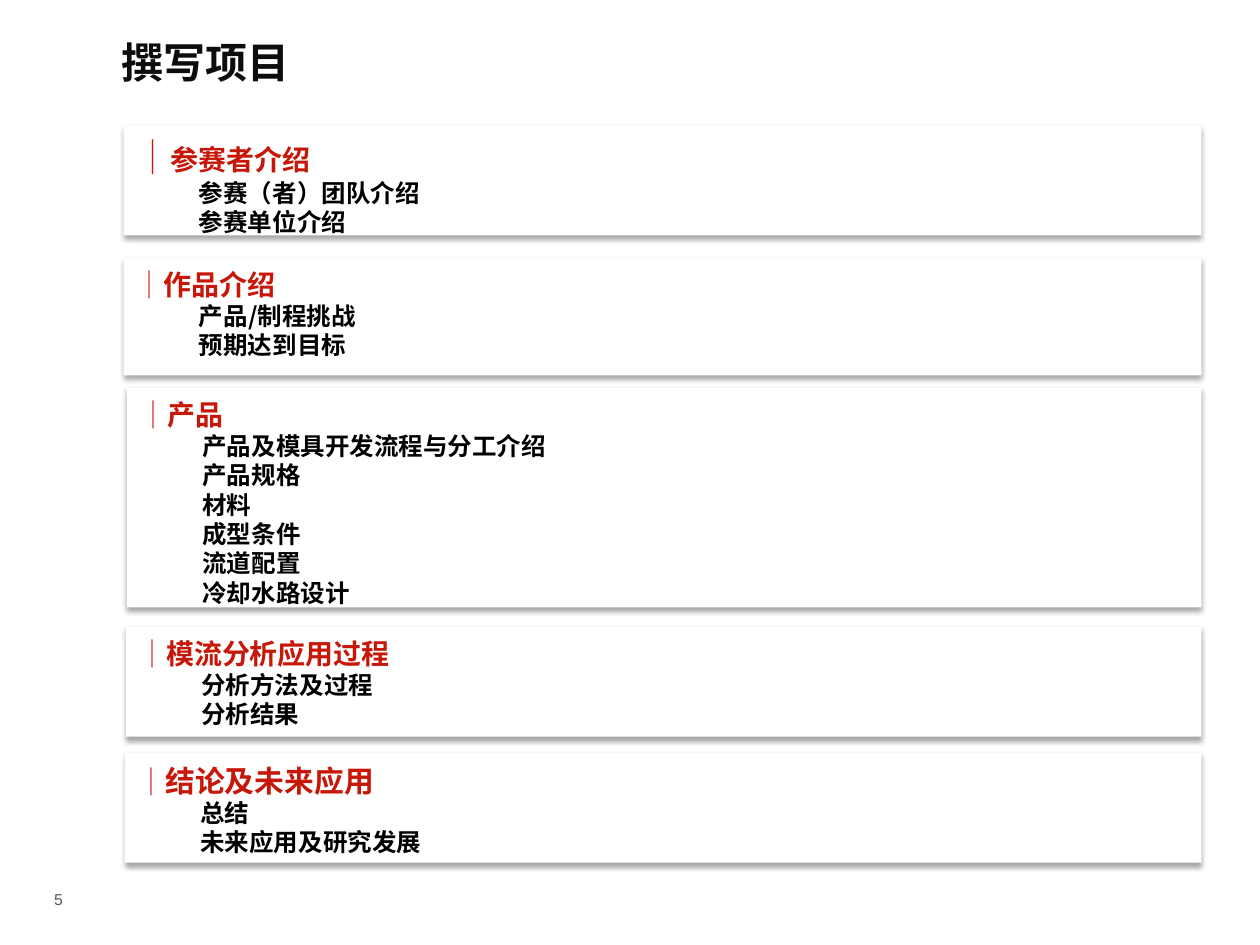
"""Build the slide that lists the sections of an entry report."""
import pptx
import pptx.util
import pptx.dml.color
import pptx.enum.text
import pptx.enum.shapes
import pptx.oxml
import pptx.oxml.ns

Pt = pptx.util.Pt
PP_ALIGN = pptx.enum.text.PP_ALIGN
MIDDLE = pptx.enum.text.MSO_ANCHOR.MIDDLE
TOP = pptx.enum.text.MSO_ANCHOR.TOP
CARD_FONT = "Noto Sans CJK SC"
RED = "C71709"
SHADOW = (
    f"<a:effectLst {pptx.oxml.ns.nsdecls('a')}>"
    f'<a:outerShdw blurRad="{Pt(3.1)}" dist="{Pt(1.8)}" dir="5400000" algn="t" rotWithShape="0">'
    '<a:srgbClr val="000000"><a:alpha val="35000"/></a:srgbClr>'
    "</a:outerShdw></a:effectLst>"
)


def color(value):
    return pptx.dml.color.RGBColor.from_string(value)


def add_text(paragraph, text, font_name, size, hex_color, bold):
    run = paragraph.add_run()
    run.text = text
    formats = {"name": font_name, "size": Pt(size), "bold": bold}
    for name, value in formats.items():
        setattr(run.font, name, value)
    run.font.color.rgb = color(hex_color)
    if font_name == CARD_FONT:
        east_asian = pptx.oxml.parse_xml(
            f'<a:ea {pptx.oxml.ns.nsdecls("a")} typeface="{font_name}"/>'
        )
        run.font._element.append(east_asian)


presentation = pptx.Presentation()
presentation.slide_width = Pt(720)
presentation.slide_height = Pt(540)
slide = presentation.slides.add_slide(presentation.slide_layouts[5])

title = slide.shapes.title
title_place = {"left": Pt(62), "top": Pt(9.5), "width": Pt(624), "height": Pt(51)}
for name, value in title_place.items():
    setattr(title, name, value)
title.text_frame.vertical_anchor = MIDDLE
title.text_frame.paragraphs[0].alignment = PP_ALIGN.LEFT
add_text(title.text_frame.paragraphs[0], "撰写项目", "Arial", 24, "0D0D0D", True)

page_number = slide.shapes.add_textbox(Pt(23.8), Pt(502.6), Pt(58.3), Pt(22.3))
page_number.text_frame.word_wrap = True
page_number.text_frame.vertical_anchor = MIDDLE
add_text(page_number.text_frame.paragraphs[0], "5", "Arial", 9, "595959", False)

sections = [
    (70.6, 72, 62.6, 20, 16, "参赛者介绍", ["参赛（者）团队介绍", "参赛单位介绍"]),
    (70.6, 147.6, 67, 16, 16, "作品介绍", ["产品/制程挑战", "预期达到目标"]),
    (72.6, 221.8, 125.3, 16, 16, "产品", [
        "产品及模具开发流程与分工介绍", "产品规格", "材料", "成型条件", "流道配置", "冷却水路设计",
    ]),
    (72, 358.4, 62.6, 16, 16, "模流分析应用过程", ["分析方法及过程", "分析结果"]),
    (71.4, 430.4, 62.6, 16, 17, "结论及未来应用", ["总结", "未来应用及研究发展"]),
]
right_edge = 686.5

for left, top, height, bar_size, heading_size, heading, items in sections:
    card = slide.shapes.add_shape(
        pptx.enum.shapes.MSO_SHAPE.RECTANGLE, Pt(left), Pt(top), Pt(right_edge - left), Pt(height)
    )
    card.fill.solid()
    card.fill.fore_color.rgb = color("FFFFFF")
    card.line.fill.background()
    card._element.spPr.append(pptx.oxml.parse_xml(SHADOW))

    text_frame = card.text_frame
    text_frame.word_wrap = True
    text_frame.vertical_anchor = TOP
    paragraph = text_frame.paragraphs[0]
    paragraph.alignment = PP_ALIGN.LEFT
    paragraph.line_spacing = Pt(1.3 * max(bar_size, heading_size))
    add_text(paragraph, "│", CARD_FONT, bar_size, RED, True)
    add_text(paragraph, heading, CARD_FONT, heading_size, RED, True)

    for item in items:
        paragraph = text_frame.add_paragraph()
        paragraph.level = 1
        paragraph.alignment = PP_ALIGN.LEFT
        paragraph.line_spacing = Pt(16.8)
        properties = paragraph._p.get_or_add_pPr()
        properties.set("marL", str(Pt(36)))
        properties.set("indent", "0")
        add_text(paragraph, item, CARD_FONT, 14, "000000", True)

presentation.save("out.pptx")
